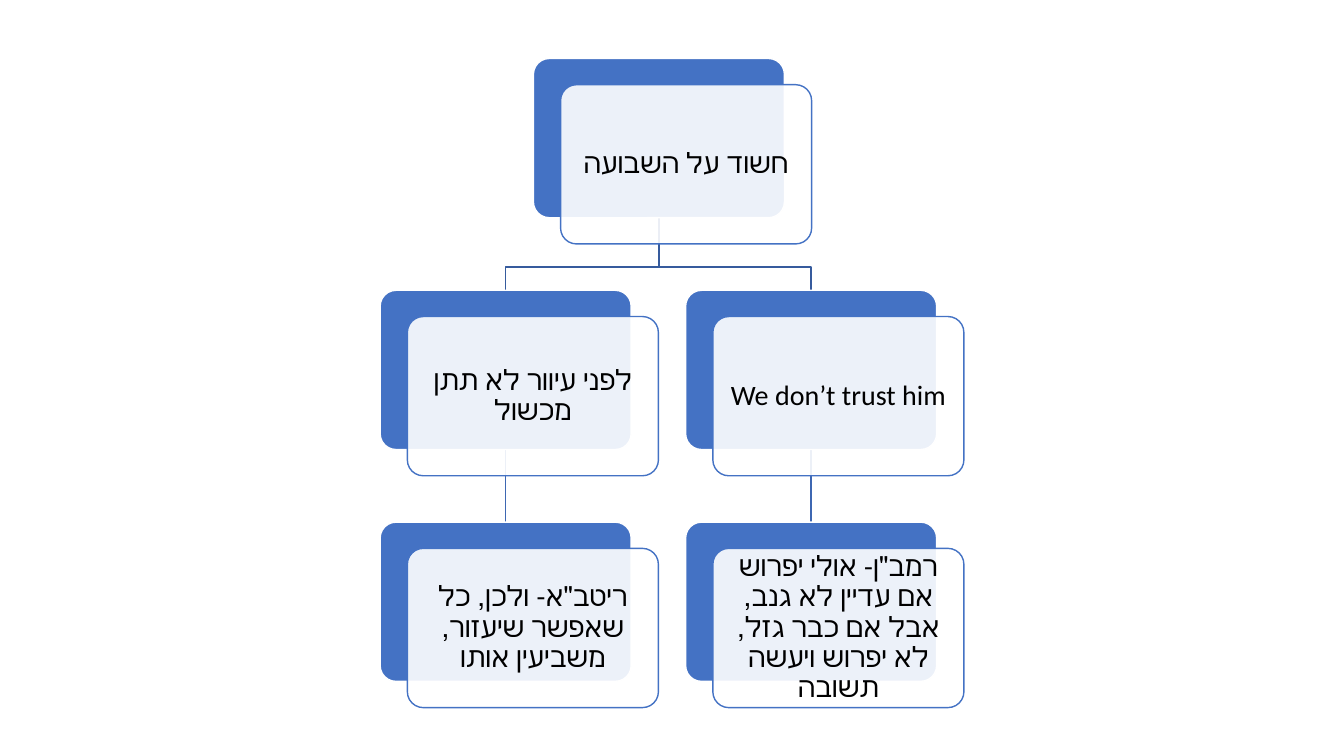
"""Build a slide with a three-level tree of Hebrew arguments about a suspected oath-taker."""
import pptx
import pptx.dml.color
import pptx.enum.shapes
import pptx.enum.text
import pptx.oxml
import pptx.oxml.ns
import pptx.util
from pptx.util import Inches

COLORS = {
    "node": "4472C4",
    "card": "FFFFFF",
    "text": "000000",
    "branch": "365B9D",
    "stem": "3E67B2",
}
NODE_WIDTH, NODE_HEIGHT = 2.49, 1.58
CARD_SHIFT_X, CARD_SHIFT_Y = 0.27, 0.26
ROOT_LEFT, LEFT_COLUMN, RIGHT_COLUMN = 5.29, 3.77, 6.8
LEVEL_TOPS = [0.58, 2.88, 5.18]
FORK_Y = 2.65

ARGUMENTS = [
    (ROOT_LEFT, 0, "חשוד על השבועה"),
    (RIGHT_COLUMN, 1, "We don’t trust him"),
    (RIGHT_COLUMN, 2, 'רמב"ן- אולי יפרוש אם עדיין לא גנב, אבל אם כבר גזל, לא יפרוש ויעשה תשובה'),
    (LEFT_COLUMN, 1, "לפני עיוור לא תתן מכשול"),
    (LEFT_COLUMN, 2, 'ריטב"א- ולכן, כל שאפשר שיעזור, משביעין אותו'),
]
FRAME_FORMAT = {
    "word_wrap": True,
    "vertical_anchor": pptx.enum.text.MSO_ANCHOR.MIDDLE,
    "margin_left": Inches(0.08),
    "margin_right": Inches(0.08),
    "margin_top": Inches(0.08),
    "margin_bottom": Inches(0.08),
}
PARAGRAPH_FORMAT = {
    "alignment": pptx.enum.text.PP_ALIGN.CENTER,
    "line_spacing": 0.9,
}
FONT_FORMAT = {"name": "Calibri", "size": pptx.util.Pt(20)}


def rgb(role):
    return pptx.dml.color.RGBColor.from_string(COLORS[role])


def add_box(left, top, fill, outline):
    box = slide.shapes.add_shape(
        pptx.enum.shapes.MSO_SHAPE.ROUNDED_RECTANGLE,
        Inches(left), Inches(top), Inches(NODE_WIDTH), Inches(NODE_HEIGHT),
    )
    box.adjustments[0] = 0.1
    box.shadow.inherit = False
    box.fill.solid()
    box.fill.fore_color.rgb = rgb(fill)
    box.line.color.rgb = rgb(outline)
    box.line.width = pptx.util.Pt(1)
    return box


presentation = pptx.Presentation()
presentation.slide_width = Inches(13.33)
presentation.slide_height = Inches(7.5)
slide = presentation.slides.add_slide(presentation.slide_layouts[6])

root_x = ROOT_LEFT + NODE_WIDTH / 2
root_bottom = LEVEL_TOPS[0] + NODE_HEIGHT

for column in (LEFT_COLUMN, RIGHT_COLUMN):
    column_x = column + NODE_WIDTH / 2

    stem = slide.shapes.add_connector(
        pptx.enum.shapes.MSO_CONNECTOR.STRAIGHT,
        Inches(column_x), Inches(LEVEL_TOPS[1] + NODE_HEIGHT),
        Inches(column_x), Inches(LEVEL_TOPS[2]),
    )
    stem.line.color.rgb = rgb("stem")
    stem.line.width = pptx.util.Pt(1)
    stem._element.spPr.append(pptx.oxml.parse_xml(
        f'<a:effectLst {pptx.oxml.ns.nsdecls("a")}/>'))

    outline = slide.shapes.build_freeform(Inches(root_x), Inches(root_bottom))
    turns = [(root_x, FORK_Y), (column_x, FORK_Y), (column_x, LEVEL_TOPS[1])]
    outline.add_line_segments([(Inches(x), Inches(y)) for x, y in turns], close=False)
    branch = outline.convert_to_shape()
    branch.shadow.inherit = False
    branch.fill.background()
    branch.line.color.rgb = rgb("branch")
    branch.line.width = pptx.util.Pt(1)

for left, level, wording in ARGUMENTS:
    top = LEVEL_TOPS[level]
    add_box(left, top, "node", "card")
    card = add_box(left + CARD_SHIFT_X, top + CARD_SHIFT_Y, "card", "node")
    card_color = card._element.spPr.find(
        f'{pptx.oxml.ns.qn("a:solidFill")}/{pptx.oxml.ns.qn("a:srgbClr")}')
    card_color.append(pptx.oxml.parse_xml(
        f'<a:alpha {pptx.oxml.ns.nsdecls("a")} val="90000"/>'))

    frame = card.text_frame
    paragraph = frame.paragraphs[0]
    run = paragraph.add_run()
    run.text = wording
    run.font.color.rgb = rgb("text")
    paragraph._p.get_or_add_pPr().set("rtl", "1")
    for part, formats in (
        (frame, FRAME_FORMAT),
        (paragraph, PARAGRAPH_FORMAT),
        (run.font, FONT_FORMAT),
    ):
        for attribute, value in formats.items():
            setattr(part, attribute, value)

presentation.save("out.pptx")
